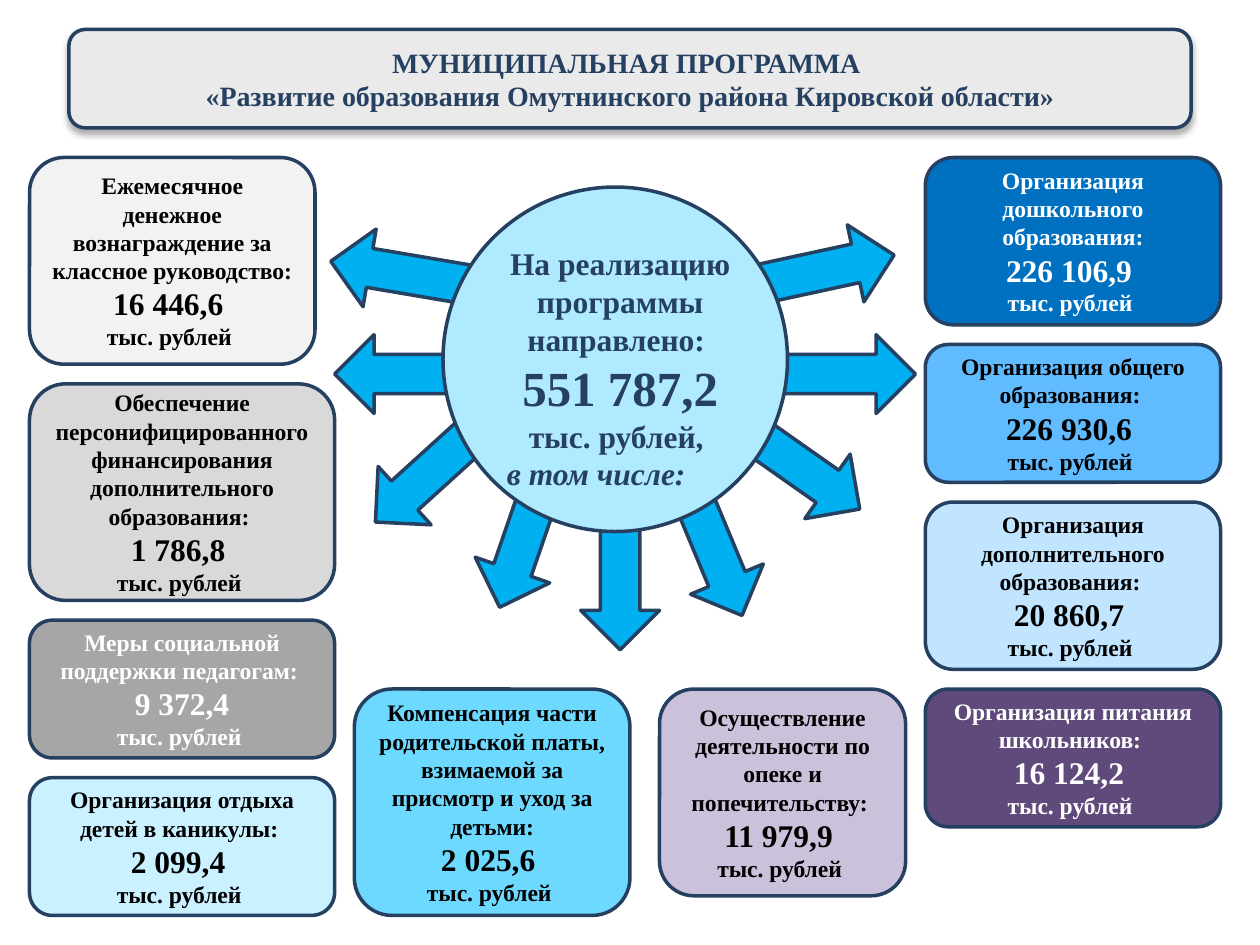
from dataclasses import dataclass

from lxml import etree
from pptx import Presentation
from pptx import util as u
from pptx.dml.color import RGBColor
from pptx.enum import shapes, text
from pptx.oxml.ns import qn

COLS, ROWS = 128, 96  # square grid cells across and down the slide
GAP = 2               # rows between stacked cards
UNIT_TEXT = "тыс. рублей "


@dataclass(frozen=True)
class Theme:
    font: str = "Times New Roman"
    navy: str = "254061"
    black: str = "000000"
    white: str = "FFFFFF"
    title_fill: str = "EAEAEA"
    circle_fill: str = "AFEAFF"
    arrow_fill: str = "00B0F0"
    line: float = 2
    title: float = 16
    label: float = 13.5
    value: float = 18
    total: float = 28


T = Theme()
KIND = shapes.MSO_SHAPE

# Cards: height in rows, fill, text colour, label, value
LEFT = [
    (21, "F2F2F2", T.black, "Ежемесячное денежное вознаграждение за классное руководство: ", "16 446,6 "),
    (22, "D9D9D9", T.black, "Обеспечение персонифицированного финансирования дополнительного образования: ",
     "1 786,8 "),
    (14, "A6A6A6", T.white, "Меры социальной поддержки педагогам: ", "9 372,4"),
    (14, "C9F1FF", T.black, "Организация отдыха детей в каникулы: ", "2 099,4 "),
]
RIGHT = [
    (17, "0070C0", T.white, "Организация дошкольного образования:", "226 106,9 "),
    (14, "61BBFF", T.black, "Организация общего образования: ", "226 930,6 "),
    (17, "C1E4FF", T.black, "Организация дополнительного образования: ", "20 860,7 "),
    (14, "604A7B", T.white, "Организация питания школьников: ", "16 124,2 "),
]
COMPENSATION = (23, "6DD9FF", T.black,
                "Компенсация части родительской платы, взимаемой за присмотр и уход за детьми:",
                "2 025,6 ")
GUARDIANSHIP = (21, "CCC1DA", T.black,
                "Осуществление деятельности по опеке и попечительству: ", "11 979,9 ")

# Arrows: column, row, rotation
ARROWS = [
    (65, 51.6, 67.4), (55.5, 54.5, 90), (45.7, 50.6, 109),
    (36.2, 44, 137.8), (34, 34, 180), (33.5, 23.8, 189.6),
    (78, 34, 0), (76, 23.5, 347.8), (73.7, 43.4, 35.1),
]


def place(prs, x, y, w, h):
    cw, rh = prs.slide_width / COLS, prs.slide_height / ROWS
    return [u.Emu(round(v)) for v in (x * cw, y * rh, w * cw, h * rh)]


def add_outlined(prs, s, kind, box, fill):
    sp = s.shapes.add_shape(kind, *place(prs, *box))
    sp.shadow.inherit = False
    sp.fill.solid()
    sp.fill.fore_color.rgb = RGBColor.from_string(fill)
    sp.line.color.rgb = RGBColor.from_string(T.navy)
    sp.line.width = u.Pt(T.line)
    return sp


def write(tf, color, lines):
    """Fill a frame with centred bold paragraphs of (words, size)."""
    tf.word_wrap = True
    for i, (words, size) in enumerate(lines):
        p = tf.paragraphs[0] if i == 0 else tf.add_paragraph()
        p.alignment = text.PP_ALIGN.CENTER
        r = p.add_run()
        r.text = words
        r.font.name, r.font.size, r.font.bold = T.font, u.Pt(size), True
        r.font.color.rgb = RGBColor.from_string(color)


def add_soft_shadow(sp):
    effects = sp._element.spPr.find(qn("a:effectLst"))
    shadow = etree.SubElement(effects, qn("a:outerShdw"), blurRad=str(u.Pt(3.5)),
                              dist=str(u.Pt(2.2)), dir="5400000", rotWithShape="0")
    color = etree.SubElement(shadow, qn("a:srgbClr"), val=T.black)
    etree.SubElement(color, qn("a:alpha"), val="32000")


def add_title(prs, s, box):
    sp = add_outlined(prs, s, KIND.ROUNDED_RECTANGLE, box, T.title_fill)
    add_soft_shadow(sp)
    sp.text_frame.vertical_anchor = text.MSO_ANCHOR.MIDDLE
    write(sp.text_frame, T.navy, [
        ("МУНИЦИПАЛЬНАЯ ПРОГРАММА ", T.title),
        ("«Развитие образования Омутнинского района Кировской области»", T.title)])


def add_arrows(prs, s):
    for x, y, angle in ARROWS:
        sp = add_outlined(prs, s, KIND.RIGHT_ARROW, (x, y, 15, 8), T.arrow_fill)
        sp.rotation = angle


def add_total(prs, s, box):
    x, y, w, h = box
    add_outlined(prs, s, KIND.OVAL, box, T.circle_fill)
    tb = s.shapes.add_textbox(*place(prs, x + 3, y + 5.2, w - 5, h - 8.2))
    tf = tb.text_frame
    write(tf, T.navy, [
        ("На реализацию программы направлено: ", T.value),
        ("551 787,2", T.total),
        ("тыс. рублей, ", T.value),
        ("в том числе:", T.value)])
    # The closing line is italic and sits left of centre
    p = tf.paragraphs[-1]
    p.runs[0].font.italic = True
    p._p.get_or_add_pPr().set("marR", str(u.Inches(0.38)))


def add_card(prs, s, x, y, w, card):
    h, fill, color, label, value = card
    sp = add_outlined(prs, s, KIND.ROUNDED_RECTANGLE, (x, y, w, h), fill)
    sp.text_frame.vertical_anchor = text.MSO_ANCHOR.MIDDLE
    write(sp.text_frame, color,
          [(label, T.label), (value, T.value), (UNIT_TEXT, T.label)])


def add_stack(prs, s, x, y, widths, cards):
    for w, card in zip(widths, cards):
        add_card(prs, s, x, y, w, card)
        y += card[0] + GAP


def main():
    prs = Presentation()
    prs.slide_width, prs.slide_height = u.Inches(10), u.Inches(7.5)
    s = prs.slides.add_slide(prs.slide_layouts[6])

    # Arrows lie behind the central circle
    add_arrows(prs, s)
    add_title(prs, s, (7, 3, 114, 10))
    add_total(prs, s, (45, 19, 35, 35))

    # Spending cards around the circle
    add_stack(prs, s, 94, 16, [30] * 4, RIGHT)
    add_stack(prs, s, 3, 16, [29, 31, 31, 31], LEFT)
    add_card(prs, s, 36, 70, 28, COMPENSATION)
    add_card(prs, s, 67, 70, 25, GUARDIANSHIP)

    prs.save("out.pptx")


if __name__ == "__main__":
    main()
